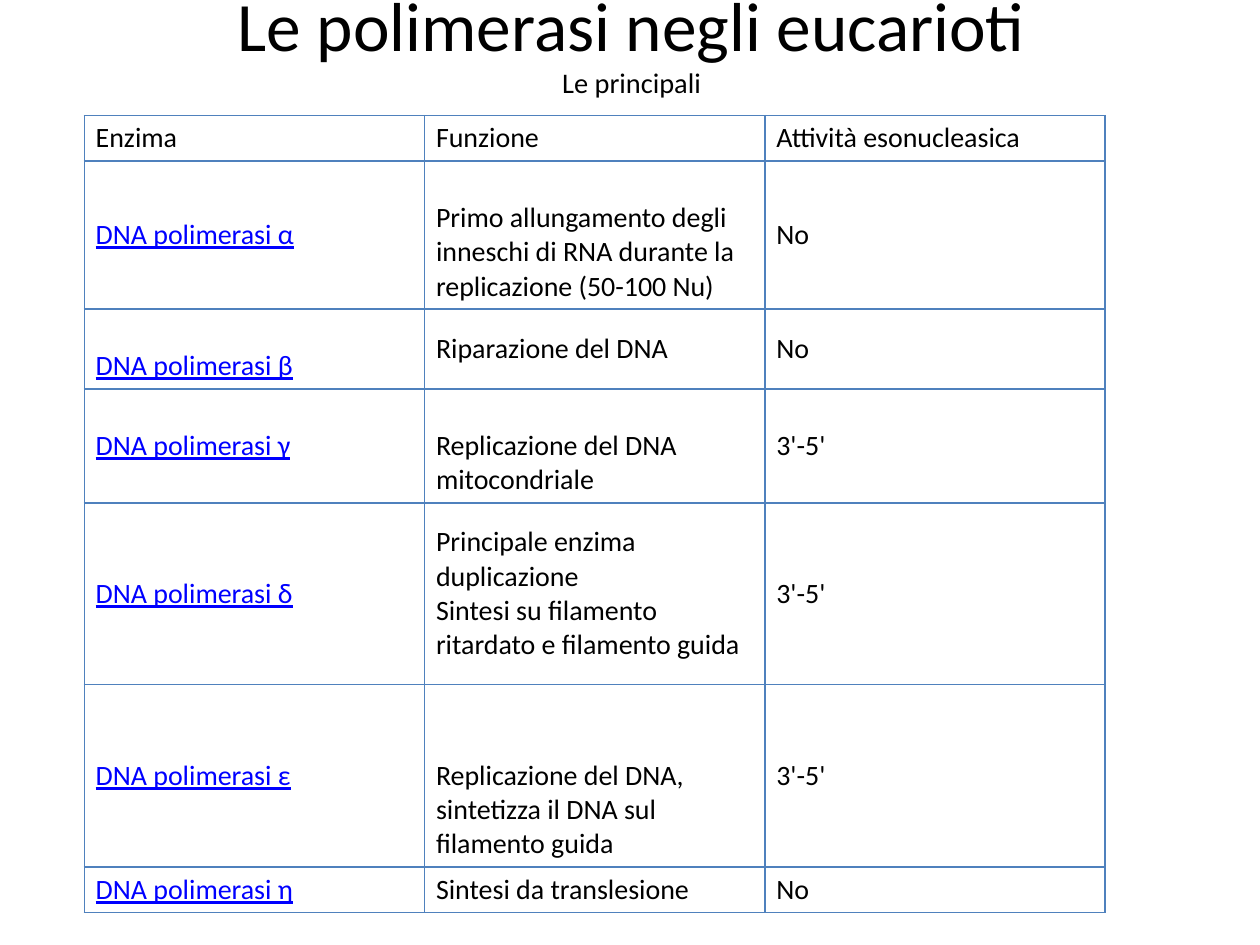
from pptx import Presentation
from pptx.dml.color import RGBColor
from pptx.enum.text import MSO_ANCHOR, MSO_AUTO_SIZE, PP_ALIGN
from pptx.oxml import parse_xml
from pptx.oxml.ns import nsdecls
from pptx.util import Cm, Pt

ROWS = [
    ("Enzima", "Funzione", "Attività esonucleasica"),
    ("DNA polimerasi α", "Primo allungamento degli inneschi di RNA durante la "
     "replicazione (50-100 Nu)", "No"),
    ("DNA polimerasi β", "Riparazione del DNA", "No"),
    ("DNA polimerasi γ", "Replicazione del DNA mitocondriale", "3'-5'"),
    ("DNA polimerasi δ", "Principale enzima duplicazione\n"
     "Sintesi su filamento ritardato e filamento guida", "3'-5'"),
    ("DNA polimerasi ε", "Replicazione del DNA, sintetizza il DNA sul "
     "filamento guida", "3'-5'"),
    ("DNA polimerasi η", "Sintesi da translesione", "No"),
]
HEIGHTS = [0.92, 2.98, 1.61, 2.3, 3.66, 3.68, 0.92]
DROPS = {(1, 1): 1, (2, 0): 1, (3, 1): 1, (5, 1): 2}
LINE = 0.69
WIDTH = 6.86


def tint(code):
    return RGBColor.from_string(code)


def apply(item, form):
    for name, value in form.items():
        setattr(item, name, value)


def style(run, size, color="000000", line=False):
    apply(run.font, {"name": "Calibri", "size": Pt(size),
                     "bold": False, "underline": line})
    run.font.color.rgb = tint(color)


def add_title(slide):
    title = slide.shapes.title
    apply(title, {"left": Cm(1.3), "top": Cm(0),
                  "width": Cm(22.86), "height": Cm(3.18)})
    frame = title.text_frame
    apply(frame, {"vertical_anchor": MSO_ANCHOR.MIDDLE, "word_wrap": True,
                  "auto_size": MSO_AUTO_SIZE.NONE,
                  "margin_top": Cm(0), "margin_bottom": Cm(1.53)})
    para = frame.paragraphs[0]
    apply(para, {"alignment": PP_ALIGN.CENTER, "space_before": Pt(0)})
    head = para.add_run()
    head.text = "Le polimerasi negli eucarioti"
    style(head, 39.6)
    para.add_line_break()
    sub = para.add_run()
    sub.text = "Le principali"
    style(sub, 16.2)


def add_edges(cell, color):
    props = cell._tc.get_or_add_tcPr()
    for spot, side in enumerate(("lnL", "lnR", "lnT", "lnB")):
        props.insert(spot, parse_xml(
            f'<a:{side} {nsdecls("a")} w="12700"><a:solidFill>'
            f'<a:srgbClr val="{color}"/></a:solidFill></a:{side}>'))


def fill_cell(cell, text, drop, link):
    apply(cell, {"vertical_anchor": MSO_ANCHOR.MIDDLE,
                 "margin_left": Cm(0.23), "margin_right": Cm(0.23),
                 "margin_top": Cm(0.1 + drop * LINE),
                 "margin_bottom": Cm(0.1)})
    cell.text = text
    for para in cell.text_frame.paragraphs:
        for run in para.runs:
            style(run, 16, "0000FF" if link else "000000", link)
    cell.fill.background()
    add_edges(cell, "4F81BD")


def add_grid(slide):
    cols = len(ROWS[0])
    table = slide.shapes.add_table(
        len(ROWS), cols, Cm(1.7), Cm(2.33),
        Cm(WIDTH * cols), Cm(sum(HEIGHTS))).table
    apply(table, {"first_row": False, "horz_banding": False})
    for col in table.columns:
        col.width = Cm(WIDTH)
    for i, (row, height) in enumerate(zip(table.rows, HEIGHTS)):
        row.height = Cm(height)
        for j, text in enumerate(ROWS[i]):
            fill_cell(table.cell(i, j), text, DROPS.get((i, j), 0),
                      i > 0 and j == 0)


def main():
    deck = Presentation()
    apply(deck, {"slide_width": Cm(25.4), "slide_height": Cm(19.05)})
    slide = deck.slides.add_slide(deck.slide_layouts[5])
    add_title(slide)
    add_grid(slide)
    deck.save("out.pptx")


if __name__ == "__main__":
    main()
